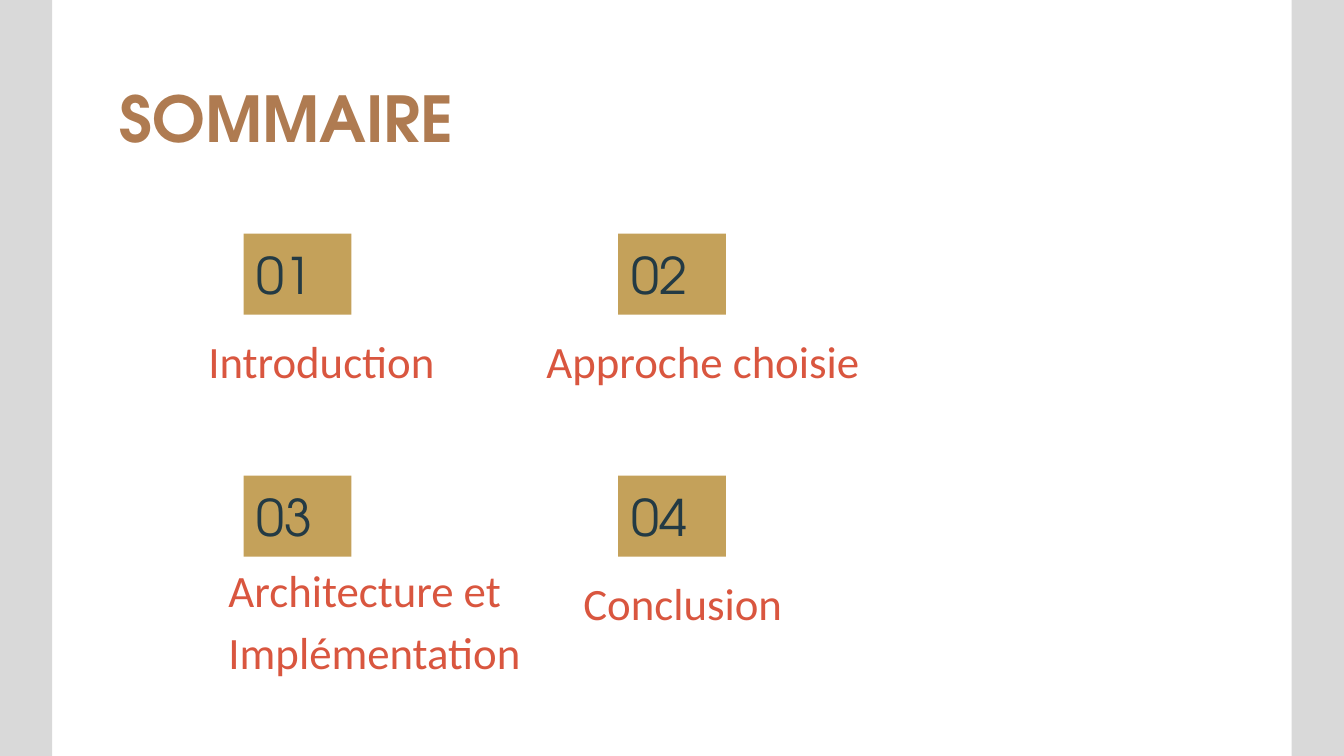
from pptx import Presentation
from pptx.dml.color import RGBColor
from pptx.enum.shapes import MSO_SHAPE
from pptx.enum.text import MSO_ANCHOR, MSO_AUTO_SIZE, PP_ALIGN
from pptx.util import Pt

COLORS = {"side": "D9D9D9", "title": "AF7B51", "box": "C4A15A",
          "number": "233A44", "topic": "D9563F"}
HEADING_FONT, BODY_FONT = "TeX Gyre Adventor", "Calibri"
INSET = 7.2


def add_box(left, top, width, height, color):
    shape = slide.shapes.add_shape(MSO_SHAPE.RECTANGLE, Pt(left), Pt(top), Pt(width), Pt(height))
    shape.shadow.inherit = False
    shape.fill.solid()
    shape.fill.fore_color.rgb = RGBColor.from_string(COLORS[color])
    shape.line.fill.background()
    return shape


def set_text(shape, text, font, size, color, anchor, inset_left=INSET, bold=False):
    frame = shape.text_frame
    frame.text = text
    frame.word_wrap = True
    frame.auto_size = MSO_AUTO_SIZE.NONE
    frame.vertical_anchor = anchor
    frame.margin_left = Pt(inset_left)
    frame.margin_top = frame.margin_right = frame.margin_bottom = Pt(INSET)
    paragraph = frame.paragraphs[0]
    paragraph.alignment = PP_ALIGN.LEFT
    run_font = paragraph.runs[0].font
    run_font.name, run_font.size, run_font.bold = font, Pt(size), bold
    run_font.color.rgb = RGBColor.from_string(COLORS[color])
    return paragraph


presentation = Presentation()
presentation.slide_width, presentation.slide_height = Pt(720), Pt(405)
slide = presentation.slides.add_slide(presentation.slide_layouts[5])

# Side bands
for left in (0, 692):
    add_box(left, 0, 28, 405, "side")

# Title
title = slide.shapes.title
title.left, title.top, title.width, title.height = Pt(56.7), Pt(35.2), Pt(607), Pt(45.4)
set_text(title, "SOMMAIRE", HEADING_FONT, 33.9, "title", MSO_ANCHOR.TOP, bold=True)

# Numbered boxes in a two by two grid
for index in range(4):
    row, column = divmod(index, 2)
    box = add_box(130.5 + 200.6 * column, 125.2 + 129.6 * row, 57.8, 43.4, "box")
    set_text(box, f"{index + 1:02}", HEADING_FONT, 27, "number", MSO_ANCHOR.MIDDLE)

# Topics: text, left, top, width, height, left inset
topics = [
    ("Introduction", 68.4, 172.1, 181.4, 42.5, 43.2),
    ("Approche choisie", 269.3, 172.1, 211.7, 42.5, 23.5),
    ("Architecture et Implémentation", 79.2, 283.7, 226, 87.1, 43.2),
    ("Conclusion", 269.3, 301.7, 181.4, 42.5, 43.2),
]
for text, left, top, width, height, inset_left in topics:
    topic = slide.shapes.add_textbox(Pt(left), Pt(top), Pt(width), Pt(height))
    paragraph = set_text(topic, text, BODY_FONT, 24, "topic", MSO_ANCHOR.BOTTOM, inset_left)
    paragraph.line_spacing = 1.15
    paragraph.space_before = Pt(8)

presentation.save("out.pptx")
